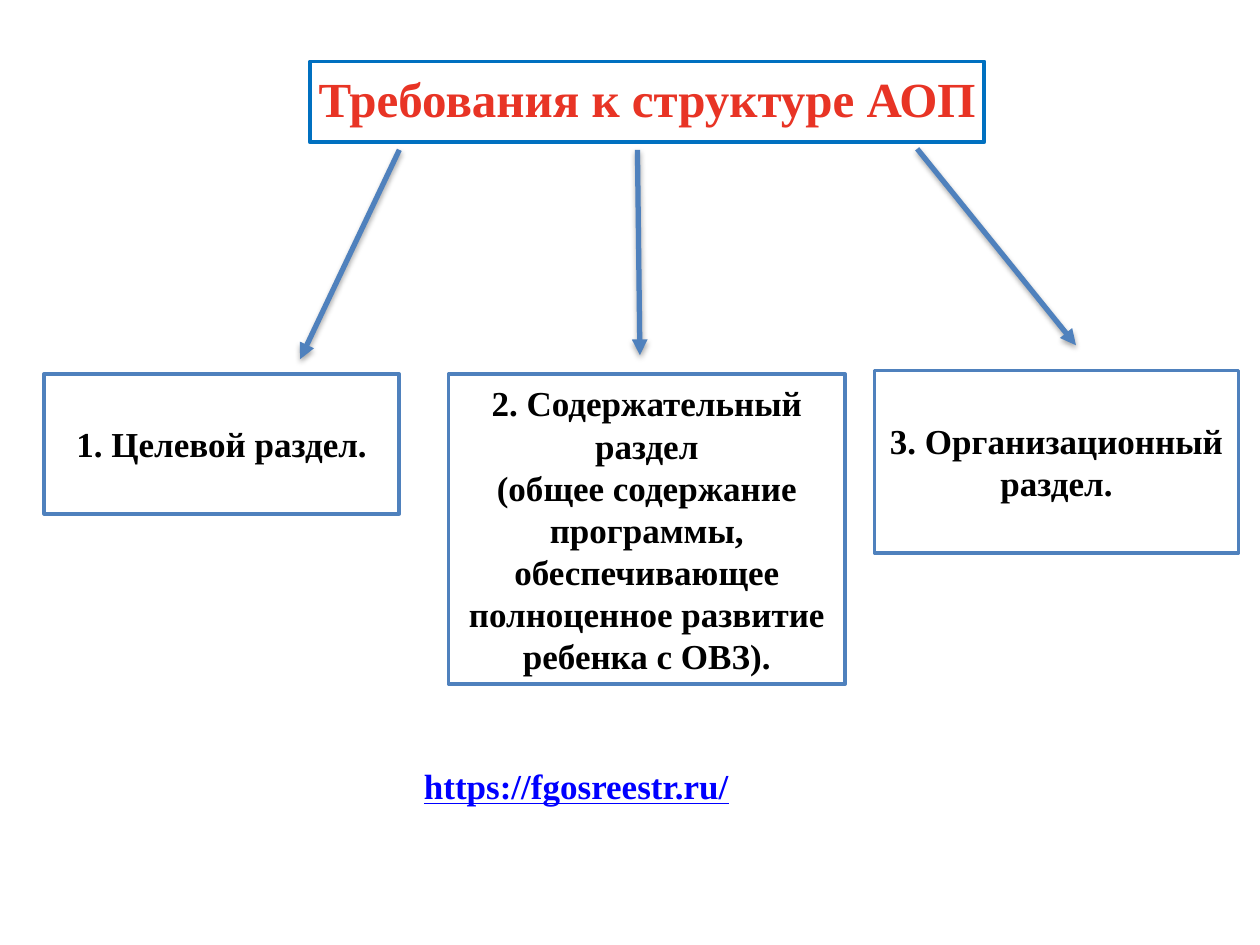
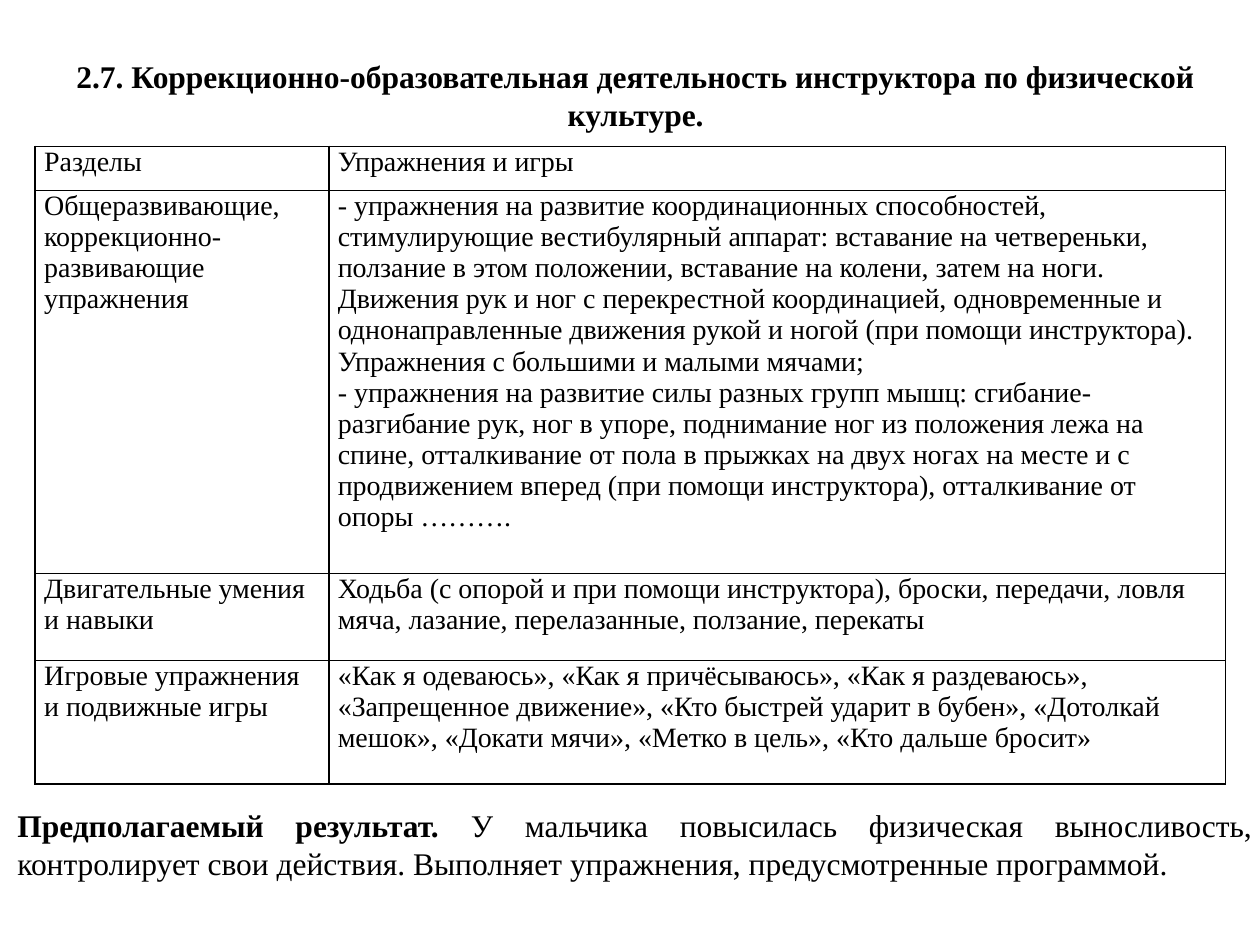
from lxml import etree
from pptx import Presentation
from pptx.dml.color import RGBColor
from pptx.enum.shapes import MSO_CONNECTOR, MSO_SHAPE
from pptx.enum.text import MSO_ANCHOR, MSO_AUTO_SIZE, PP_ALIGN
from pptx.oxml import parse_xml
from pptx.oxml.ns import qn
from pptx.util import Cm, Pt

RECT, LINE = MSO_SHAPE.RECTANGLE, MSO_CONNECTOR.STRAIGHT
TOP, MIDDLE = MSO_ANCHOR.TOP, MSO_ANCHOR.MIDDLE
LEFT, CENTER, JUSTIFY = PP_ALIGN.LEFT, PP_ALIGN.CENTER, PP_ALIGN.JUSTIFY
FIXED = MSO_AUTO_SIZE.NONE
TITLE_ONLY = 5

FONT = "Times New Roman"
BLACK, WHITE, RED = "000000", "FFFFFF", "E83425"
FRAME, BLUE, LINK = "0070C0", "4F81BD", "0000FF"
NS = 'xmlns:a="http://schemas.openxmlformats.org/drawingml/2006/main"'
SHADOW = (
    f'<a:effectLst {NS}><a:outerShdw blurRad="40000" dist="23000" dir="5400000" rotWithShape="0">'
    '<a:srgbClr val="000000"><a:alpha val="35000"/></a:srgbClr></a:outerShdw></a:effectLst>'
)


def rgb(code):
    return RGBColor.from_string(code)


def cms(*sizes):
    return [Cm(size) for size in sizes]


def assign(target, values):
    for name, value in values.items():
        setattr(target, name, value)


class Deck:
    """Holds the text style and the slide being filled."""

    def __init__(self):
        self.show = Presentation()
        self.show.slide_width, self.show.slide_height = cms(25.4, 19.05)
        self.slide = None

    def start(self):
        self.slide = self.show.slides.add_slide(self.show.slide_layouts[TITLE_ONLY])

    def place_text(self, frame, paras, size, align=CENTER, anchor=MIDDLE):
        assign(frame, {"word_wrap": True, "auto_size": FIXED, "vertical_anchor": anchor})
        self.add_text(frame, paras, size, align)

    def add_text(self, frame, paras, size, align):
        """Each paragraph is a list of (text, font values) runs."""
        for index, runs in enumerate(paras):
            para = frame.add_paragraph() if index else frame.paragraphs[0]
            para.alignment = align
            for text, values in runs:
                run = para.add_run()
                run.text = text
                style = {"name": FONT, "size": Pt(size), "bold": True, **values}
                color = style.pop("color", BLACK)
                assign(run.font, style)
                run.font.color.rgb = rgb(color)

    def title(self, text, place, size, color=BLACK):
        shape = self.slide.shapes.title
        assign(shape, dict(zip(("left", "top", "width", "height"), cms(*place))))
        self.place_text(shape.text_frame, [[(text, {"color": color})]], size)

    def box(self, place, line, width, paras=(), fill=None):
        shape = self.slide.shapes.add_shape(RECT, *cms(*place))
        shape.shadow.inherit = False
        if fill:
            shape.fill.solid()
            shape.fill.fore_color.rgb = rgb(fill)
        else:
            shape.fill.background()
        shape.line.color.rgb = rgb(line)
        shape.line.width = Pt(width)
        if paras:
            self.place_text(shape.text_frame, [[(text, {})] for text in paras], 20)

    def text(self, place, runs, size, align=CENTER):
        shape = self.slide.shapes.add_textbox(*cms(*place))
        self.place_text(shape.text_frame, [runs], size, align, TOP)

    def arrow(self, start, end):
        shape = self.slide.shapes.add_connector(LINE, *cms(*start, *end))
        shape.line.color.rgb = rgb(BLUE)
        shape.line.width = Pt(3)
        props = shape._element.spPr
        etree.SubElement(props.find(qn("a:ln")), qn("a:tailEnd"), type="triangle")
        props.append(parse_xml(SHADOW))

    def table(self, place, cols, rows, cells):
        shape = self.slide.shapes.add_table(len(rows), len(cols), *cms(*place, sum(cols), sum(rows)))
        table = shape.table
        assign(table, {"first_row": False, "horz_banding": False})
        for col, width in zip(table.columns, cols):
            col.width = Cm(width)
        for row, height, texts in zip(table.rows, rows, cells):
            row.height = Cm(height)
            for cell, paras in zip(row.cells, texts):
                self.cell(cell, paras)

    def cell(self, cell, paras):
        assign(cell, {"margin_left": Cm(0.18), "margin_right": Cm(0.18),
                      "margin_top": 0, "margin_bottom": 0, "vertical_anchor": TOP})
        self.add_text(cell.text_frame, [[(text, {"bold": False})] for text in paras], 16, LEFT)
        props = cell._tc.get_or_add_tcPr()
        for side in "LRTB":
            props.append(parse_xml(
                f'<a:ln{side} {NS} w="12700"><a:solidFill><a:srgbClr val="{BLACK}"/>'
                f'</a:solidFill></a:ln{side}>'))
        cell.fill.solid()
        cell.fill.fore_color.rgb = rgb(WHITE)


def parts(deck):
    deck.start()
    # Framed title
    deck.box((6.25, 1.24, 13.59, 1.63), FRAME, 2.25)
    deck.title("Требования к структуре АОП", (0.84, 1.07, 24.41, 1.8), 28, RED)
    # Three sections
    sections = [
        ((0.89, 7.54, 7.16, 2.82), ["1. Целевой раздел."]),
        ((9.04, 7.54, 8, 6.25), [
            "2. Содержательный раздел",
            "(общее содержание программы, обеспечивающее полноценное развитие ребенка с ОВЗ)."]),
        ((17.63, 7.47, 7.34, 3.68), ["3. Организационный раздел."]),
    ]
    for place, paras in sections:
        deck.box(place, BLUE, 2, paras, WHITE)
    # Arrows from the title to the sections
    for start, end in [((8.05, 3.02), (6.05, 7.24)),
                       ((12.85, 3.02), (12.9, 7.16)),
                       ((18.49, 3), (21.69, 6.96))]:
        deck.arrow(start, end)
    # Web address
    deck.text((6.72, 15.29, 9.8, 1.12),
              [("https://fgosreestr.ru/", {"color": LINK, "underline": True})], 20)


def sport(deck):
    deck.start()
    deck.title("2.7. Коррекционно-образовательная деятельность инструктора по физической культуре.",
               (0.71, 1.02, 24.21, 1.8), 18)
    # Exercises by section
    cells = [
        (["Разделы"], ["Упражнения и игры"]),
        (["Общеразвивающие, коррекционно- развивающие упражнения"], [
            "- упражнения на развитие координационных способностей, стимулирующие вестибулярный "
            "аппарат: вставание на четвереньки, ползание в этом положении, вставание на колени, "
            "затем на ноги. Движения рук и ног с перекрестной координацией, одновременные и "
            "однонаправленные движения рукой и ногой (при помощи инструктора). Упражнения с "
            "большими и малыми мячами;",
            "- упражнения на развитие силы разных групп мышц: сгибание-разгибание рук, ног в упоре, "
            "поднимание ног из положения лежа на спине, отталкивание от пола в прыжках на двух "
            "ногах на месте и с продвижением вперед (при помощи инструктора), отталкивание от "
            "опоры ……….",
        ]),
        (["Двигательные умения и навыки"], [
            "Ходьба (с опорой и при помощи инструктора), броски, передачи, ловля мяча, лазание, "
            "перелазанные, ползание, перекаты"]),
        (["Игровые упражнения и подвижные игры"], [
            "«Как я одеваюсь», «Как я причёсываюсь», «Как я раздеваюсь», «Запрещенное движение», "
            "«Кто быстрей ударит в бубен», «Дотолкай мешок», «Докати мячи», «Метко в цель», "
            "«Кто дальше бросит»"]),
    ]
    deck.table((0.71, 2.95), (5.92, 18.08), (0.89, 7.72, 1.75, 2.49), cells)
    # Expected result
    deck.text((0.1, 16.13, 25.4, 1.8), [
        ("Предполагаемый результат. ", {}),
        ("У мальчика повысилась физическая выносливость, контролирует свои действия. "
         "Выполняет упражнения, предусмотренные программой.", {"bold": False}),
    ], 18, JUSTIFY)


def main():
    deck = Deck()
    parts(deck)
    sport(deck)
    deck.show.save("out.pptx")


if __name__ == "__main__":
    main()
